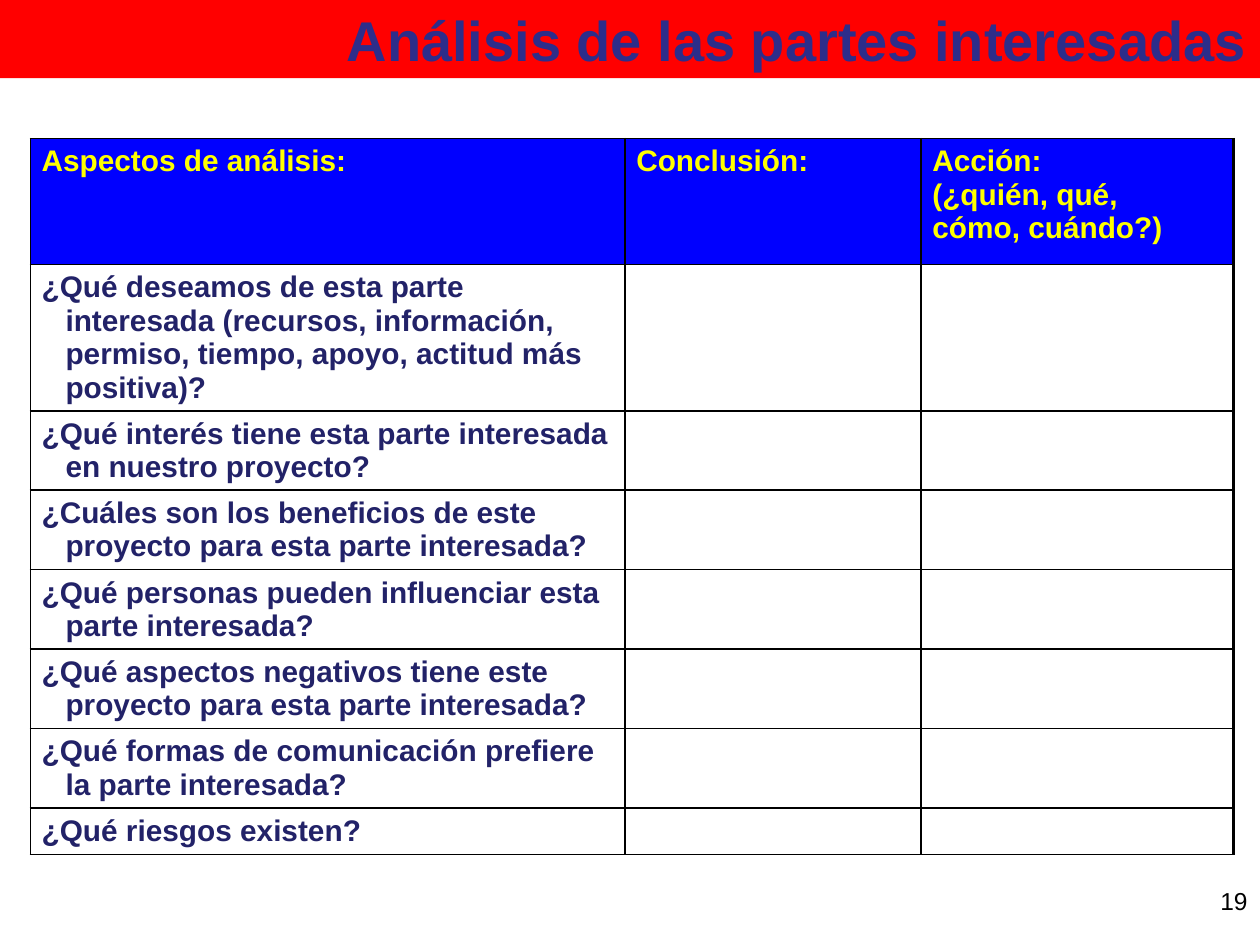
from lxml import etree
from pptx import Presentation
from pptx.dml.color import RGBColor
from pptx.enum.text import MSO_ANCHOR, PP_ALIGN
from pptx.oxml.ns import qn
from pptx.util import Inches, Pt

RIGHT = PP_ALIGN.RIGHT
LEFT = PP_ALIGN.LEFT
MIDDLE = MSO_ANCHOR.MIDDLE
TOP = MSO_ANCHOR.TOP

HEADS = ["Aspectos de análisis:", "Conclusión:",
         "Acción: \n(¿quién, qué, \ncómo, cuándo?)"]
ASKS = [
    "¿Qué deseamos de esta parte interesada (recursos, información, "
    "permiso, tiempo, apoyo, actitud más positiva)?",
    "¿Qué interés tiene esta parte interesada en nuestro proyecto?",
    "¿Cuáles son los beneficios de este proyecto para esta parte interesada?",
    "¿Qué personas pueden influenciar esta parte interesada?",
    "¿Qué aspectos negativos tiene este proyecto para esta parte interesada?",
    "¿Qué formas de comunicación prefiere la parte interesada?",
    "¿Qué riesgos existen?",
]
WIDTHS = [4.72, 2.35, 2.48]
HEIGHTS = [1, 1.16] + [0.63] * 5 + [0.37]


def color(code):
    return RGBColor.from_string(code)


def paint(shape, code):
    shape.fill.solid()
    shape.fill.fore_color.rgb = color(code)


def place(shape, box):
    for name, value in zip(("left", "top", "width", "height"), box):
        setattr(shape, name, Inches(value))


def write(frame, text, size, code, bold=True, align=LEFT):
    para = frame.paragraphs[0]
    para.text = text
    para.alignment = align
    look = {"name": "Arial", "size": Pt(size), "bold": bold}
    for run in para.runs:
        for name, value in look.items():
            setattr(run.font, name, value)
        run.font.color.rgb = color(code)
    return para


def hang(para, depth):
    props = para._p.get_or_add_pPr()
    props.set("marL", str(Inches(depth)))
    props.set("indent", str(-Inches(depth)))


def edge(cell, last):
    props = cell._tc.get_or_add_tcPr()
    for spot, side in enumerate("LRTB"):
        width = 2.25 if last and side == "R" else 1
        line = etree.Element(qn("a:ln" + side), w=str(Pt(width)))
        fill = etree.SubElement(line, qn("a:solidFill"))
        etree.SubElement(fill, qn("a:srgbClr"), val="000000")
        props.insert(spot, line)


def add_title(slide, box):
    title = slide.shapes.title
    place(title, box)
    paint(title, "FF0000")
    frame = title.text_frame
    frame.vertical_anchor = MIDDLE
    frame.word_wrap = True
    write(frame, "Análisis de las partes interesadas", 32, "2D2D8A",
          align=RIGHT)


def add_grid(slide, box):
    rows = [HEADS] + [[ask, "", ""] for ask in ASKS]
    area = [Inches(part) for part in box]
    grid = slide.shapes.add_table(len(rows), len(HEADS), *area).table
    for col, width in zip(grid.columns, WIDTHS):
        col.width = Inches(width)
    for row, height in zip(grid.rows, HEIGHTS):
        row.height = Inches(height)
    for r, texts in enumerate(rows):
        for c, text in enumerate(texts):
            cell = grid.cell(r, c)
            pad = Inches(0.05 if text else 0)
            form = {"margin_left": Inches(0.09), "margin_right": Inches(0.09),
                    "margin_top": pad, "margin_bottom": pad,
                    "vertical_anchor": TOP}
            for name, value in form.items():
                setattr(cell, name, value)
            paint(cell, "FFFFFF" if r else "0000FF")
            edge(cell, c == len(texts) - 1)
            if text:
                para = write(cell.text_frame, text, 17,
                             "222268" if r else "FFFF00")
                if r:
                    hang(para, 0.19)


def add_number(slide, box):
    label = slide.shapes.add_textbox(*[Inches(part) for part in box])
    frame = label.text_frame
    frame.word_wrap = True
    write(frame, "19", 14, "000000", bold=False, align=RIGHT)


def main():
    deck = Presentation()
    deck.slide_width, deck.slide_height = Inches(10), Inches(7.5)
    slide = deck.slides.add_slide(deck.slide_layouts[5])
    add_title(slide, (0, 0, 10, 0.62))
    add_grid(slide, (0.24, 1.1, sum(WIDTHS), sum(HEIGHTS)))
    add_number(slide, (7.67, 6.98, 2.33, 0.52))
    deck.save("out.pptx")


if __name__ == "__main__":
    main()
